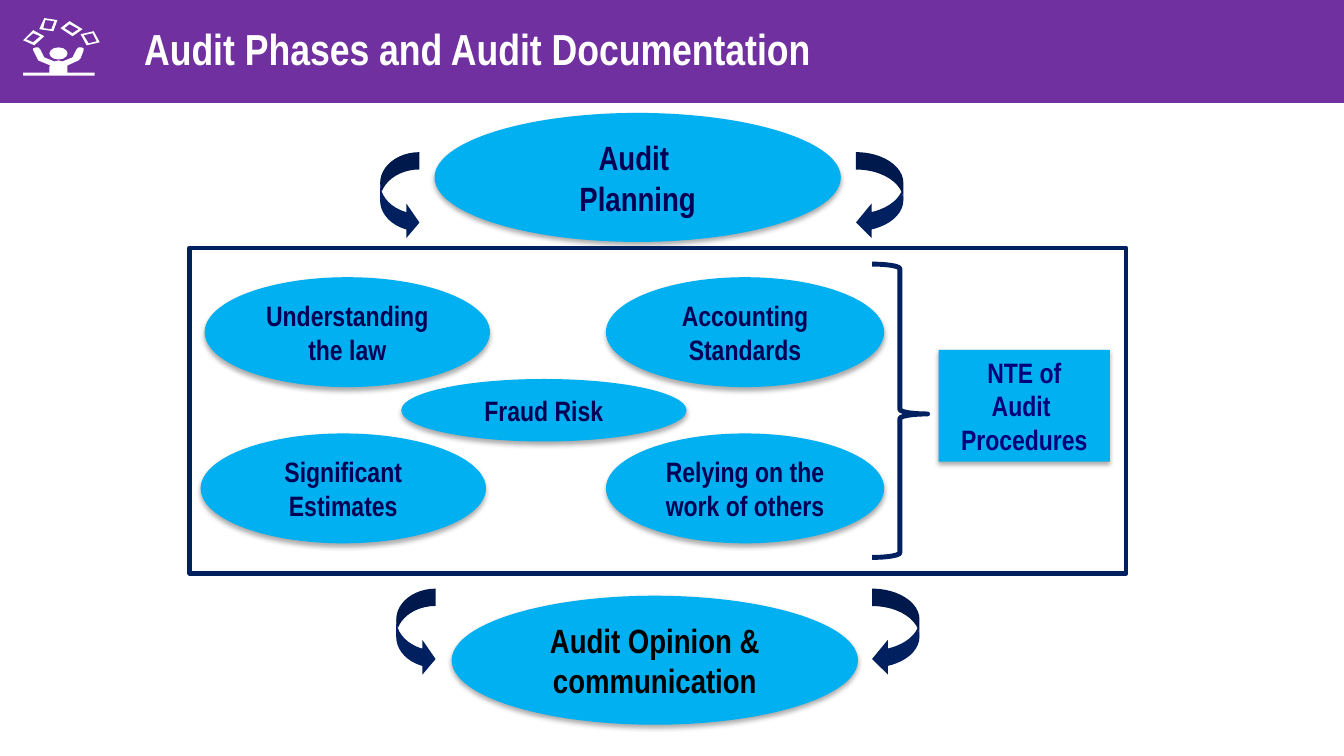
from dataclasses import dataclass

from lxml import etree
from pptx import Presentation
from pptx.dml.color import RGBColor
from pptx.enum.shapes import MSO_SHAPE
from pptx.enum.text import MSO_ANCHOR, PP_ALIGN
from pptx.oxml.ns import qn
from pptx.shapes.autoshape import Shape
from pptx.util import Inches, Pt

RECTANGLE = MSO_SHAPE.RECTANGLE
OVAL = MSO_SHAPE.OVAL
LEFT_ARROW = MSO_SHAPE.CURVED_LEFT_ARROW
RIGHT_ARROW = MSO_SHAPE.CURVED_RIGHT_ARROW
RIGHT_BRACE = MSO_SHAPE.RIGHT_BRACE
MIDDLE = MSO_ANCHOR.MIDDLE
CENTER = PP_ALIGN.CENTER
LEFT = PP_ALIGN.LEFT

PURPLE = RGBColor(0x70, 0x30, 0xA0)
SKY = RGBColor(0x00, 0xB0, 0xF0)
NAVY = RGBColor(0x00, 0x20, 0x60)
INK = RGBColor(0x00, 0x00, 0x54)
BLUE_INK = RGBColor(0x00, 0x00, 0x7A)
BLACK = RGBColor(0x00, 0x00, 0x00)
WHITE = RGBColor(0xFF, 0xFF, 0xFF)
FONT = "Arial Narrow"

Points = list[tuple[int, int]]


@dataclass
class Box:
    left: float
    top: float
    width: float
    height: float


@dataclass
class Topic:
    lines: list[str]
    box: Box
    size: int = 20
    color: RGBColor = INK
    kind: MSO_SHAPE = OVAL
    wrap: bool = True


TOPICS = [
    Topic(["Audit ", "Planning"], Box(4.31, 1.12, 4.03, 1.28), size=24),
    Topic(["Audit Opinion & communication"], Box(4.48, 5.91, 4.03, 1.28), size=24, color=BLACK),
    Topic(["Accounting", "Standards"], Box(6.01, 2.75, 2.76, 1.09)),
    Topic(["Relying on the work of others"], Box(6.01, 4.3, 2.76, 1.09)),
    Topic(["Significant", "Estimates"], Box(1.99, 4.3, 2.83, 1.09)),
    Topic(["Understanding", "the law"], Box(2.03, 2.75, 2.83, 1.09)),
    Topic(["Fraud Risk"], Box(3.98, 3.76, 2.83, 0.62)),
    Topic(["NTE of", "Audit ", "Procedures"], Box(9.31, 3.47, 1.7, 1.11),
          color=BLUE_INK, kind=RECTANGLE, wrap=False),
]

# Juggler icon outlines, in hundredths of an inch
PAPERS: list[Points] = [
    [(33, 30), (44, 36), (34, 45), (23, 40)],
    [(33, 33), (26, 39), (33, 42), (40, 36)],
    [(69, 21), (60, 28), (72, 36), (82, 29)],
    [(69, 24), (78, 29), (72, 33), (64, 28)],
    [(57, 20), (44, 18), (39, 29), (53, 31)],
    [(54, 21), (51, 29), (43, 28), (45, 20)],
    [(93, 31), (99, 42), (86, 45), (80, 34)],
    [(92, 33), (83, 35), (88, 43), (96, 41)],
]
BODY: Points = [
    (58, 60), (54, 61), (44, 57), (40, 49), (38, 47), (36, 47), (33, 48), (33, 50),
    (37, 58), (38, 60), (50, 65), (49, 66), (49, 72), (23, 72), (23, 75), (94, 75),
    (94, 72), (67, 72), (67, 65), (78, 60), (80, 58), (83, 50), (83, 48), (81, 47),
    (78, 47), (76, 49), (72, 57), (62, 61),
]

prs = Presentation()
prs.slide_width = Inches(13.33)
prs.slide_height = Inches(7.5)
slide = prs.slides.add_slide(prs.slide_layouts[6])


def add_shape(kind: MSO_SHAPE, box: Box, fill: RGBColor | None = None,
              line: RGBColor | None = None, line_width: float = 0,
              adjustments: tuple[float, ...] = ()) -> Shape:
    shape = slide.shapes.add_shape(kind, Inches(box.left), Inches(box.top),
                                   Inches(box.width), Inches(box.height))
    shape.shadow.inherit = False
    if fill is None:
        shape.fill.background()
    else:
        shape.fill.solid()
        shape.fill.fore_color.rgb = fill
    if line is None:
        shape.line.fill.background()
    else:
        shape.line.color.rgb = line
        shape.line.width = Pt(line_width)
    for index, value in enumerate(adjustments):
        shape.adjustments[index] = value
    return shape


def write_lines(shape: Shape, lines: list[str], size: int, color: RGBColor,
                align: PP_ALIGN = CENTER, wrap: bool = True) -> None:
    frame = shape.text_frame
    frame.word_wrap = wrap
    frame.vertical_anchor = MIDDLE
    frame.text = "\n".join(lines)
    for paragraph in frame.paragraphs:
        paragraph.alignment = align
        paragraph.font.name = FONT
        paragraph.font.size = Pt(size)
        paragraph.font.bold = True
        paragraph.font.color.rgb = color


def add_soft_shadow(shape: Shape) -> None:
    effects = shape.element.spPr.find(qn("a:effectLst"))
    shadow = etree.SubElement(effects, qn("a:outerShdw"), blurRad=str(Pt(3.5)),
                              dist=str(Pt(2.2)), dir="5400000", rotWithShape="0")
    tint = etree.SubElement(shadow, qn("a:srgbClr"), val=str(BLACK))
    etree.SubElement(tint, qn("a:alpha"), val="32000")


def add_topic(topic: Topic) -> None:
    shape = add_shape(topic.kind, topic.box, SKY)
    add_soft_shadow(shape)
    write_lines(shape, topic.lines, topic.size, topic.color, wrap=topic.wrap)


def add_juggler() -> None:
    outlines = [*PAPERS, BODY]
    builder = slide.shapes.build_freeform(*outlines[0][0], scale=Inches(0.01))
    for outline in outlines:
        builder.move_to(*outline[0])
        builder.add_line_segments(outline[1:], close=True)
    juggler = builder.convert_to_shape()
    juggler.shadow.inherit = False
    juggler.fill.solid()
    juggler.fill.fore_color.rgb = WHITE
    juggler.line.fill.background()
    add_shape(OVAL, Box(0.49, 0.47, 0.18, 0.12), WHITE)


def add_arrow_pair(left: float, top: float) -> None:
    add_shape(RIGHT_ARROW, Box(left, top, 0.39, 0.87), NAVY, adjustments=(0.44, 0.879, 0.333))
    add_shape(LEFT_ARROW, Box(left + 4.72, top, 0.47, 0.87), NAVY,
              adjustments=(0.367, 0.734, 0.333))


# Title bar
title_bar = add_shape(RECTANGLE, Box(-0.04, -0.08, 13.37, 1.11), PURPLE, WHITE, 0.5)
title_bar.text_frame.margin_left = Inches(1.47)
write_lines(title_bar, ["Audit Phases and Audit Documentation"], 31, WHITE, LEFT)
add_juggler()

# Arrows between the phases
add_arrow_pair(3.77, 1.51)
add_arrow_pair(3.93, 5.84)

# Phases and considerations
for topic in TOPICS:
    add_topic(topic)

# Frame and brace around the considerations
add_shape(RECTANGLE, Box(1.88, 2.46, 9.29, 3.23), line=NAVY, line_width=3)
add_shape(RIGHT_BRACE, Box(8.65, 2.62, 0.55, 2.91), line=NAVY, line_width=3.5,
          adjustments=(0.083, 0.511))

prs.save("out.pptx")
